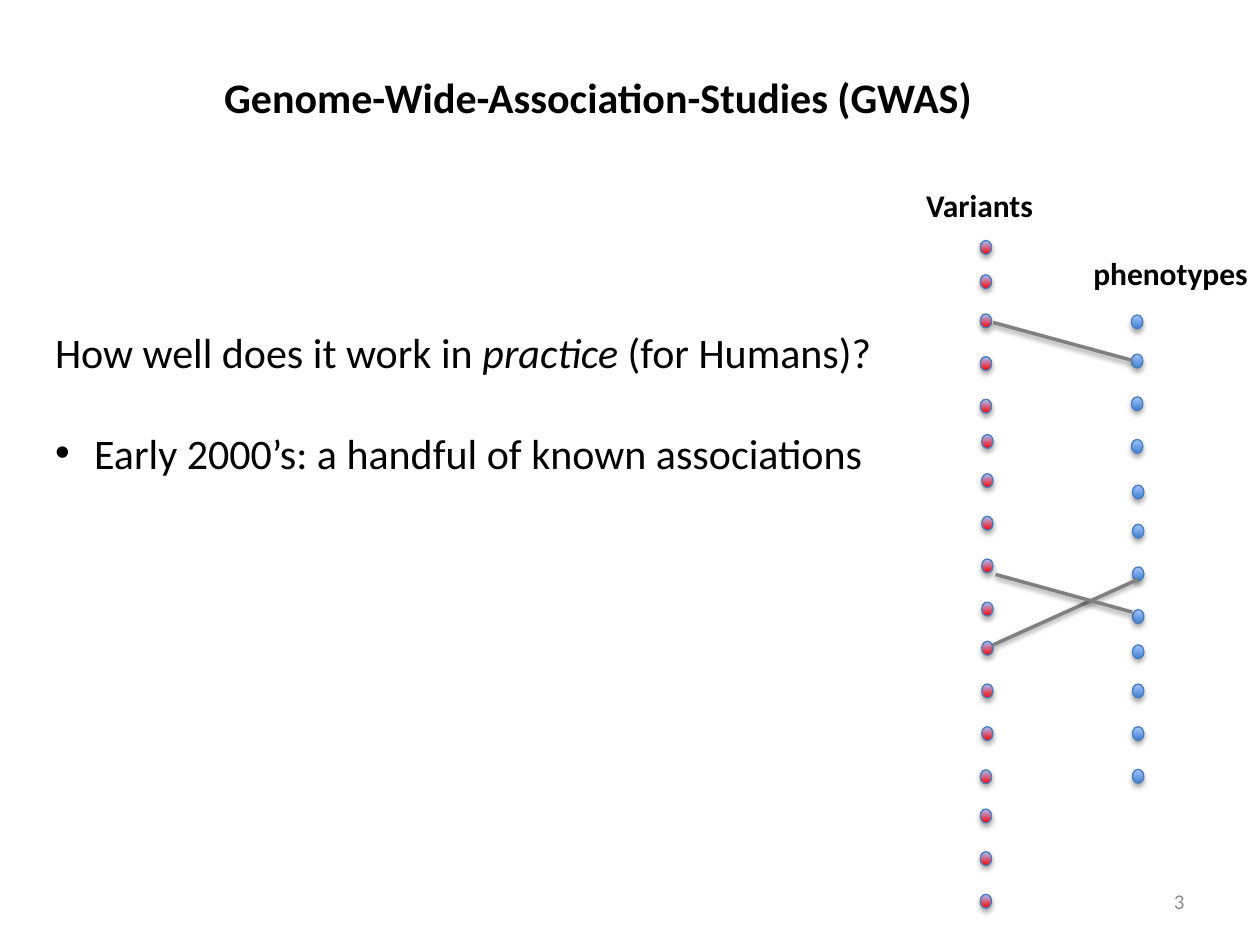
from pptx import Presentation
from pptx.dml.color import RGBColor as RGB
from pptx.enum.shapes import MSO_CONNECTOR as CONN, MSO_SHAPE as SHAPE
from pptx.enum.text import MSO_ANCHOR as ANCHOR, MSO_AUTO_SIZE as FIT, PP_ALIGN as ALIGN
from pptx.oxml import parse_xml
from pptx.oxml.ns import nsdecls
from pptx.util import Cm, Pt

# Content: a paragraph is a list of (text, italic) runs
TITLE = [[("Genome-Wide-Association-Studies (GWAS)", False)]]
BODY = [
    [("How well does it work in ", False), ("practice", True), (" (for Humans)?", False)],
    [("Early 2000’s: a handful of known associations", False)],
]
VARIANTS = [[("Variants", False)]]
PHENOTYPES = [[("phenotypes", False)]]
PAGE = [[("3", False)]]

# Dots come in runs of four, all lengths in cm: (left, top, number of dots)
DOT_W, DOT_H = 0.23, 0.28
DOT_STEPS = (0, 0.79, 1.65, 2.51)
VARIANT_DOTS = [(19.76, 4.85, 1), (19.76, 5.54, 4), (19.79, 8.76, 4),
                (19.79, 12.14, 4), (19.76, 15.52, 4)]
PHENOTYPE_DOTS = [(22.81, 6.35, 4), (22.83, 9.78, 4), (22.83, 13.0, 4)]
ASSOCIATIONS = [(20.02, 6.5, 22.81, 7.26), (20.02, 13.0, 22.94, 11.68),
                (20.07, 11.58, 22.83, 12.34)]

THEME = {
    "font": "Calibri",
    "text": "000000", "muted": "8C8C8C",
    "variant": "FF0000", "phenotype": "3F80CE", "highlight": "A4C4FF",
    "outline": "4B7EBC", "link": "808080",
    "large": 24, "label": 18, "small": 12,
}

prs = Presentation()
prs.slide_width, prs.slide_height = Cm(25.4), Cm(19.05)
s = prs.slides.add_slide(prs.slide_layouts[6])


def color(name):
    return RGB.from_string(THEME[name])


def add_text(paras, box, size="large", ink="text", bold=False, wrap=False,
             align=ALIGN.LEFT, anchor=ANCHOR.TOP, fit=FIT.SHAPE_TO_FIT_TEXT, gap=0):
    tf = s.shapes.add_textbox(*map(Cm, box)).text_frame
    tf.word_wrap, tf.auto_size, tf.vertical_anchor = wrap, fit, anchor
    for i, runs in enumerate(paras):
        p = tf.add_paragraph() if i else tf.paragraphs[0]
        p.alignment = align
        p.space_before = Pt(gap if i else 0)
        for text, italic in runs:
            r = p.add_run()
            r.text = text
            r.font.name, r.font.size = THEME["font"], Pt(THEME[size])
            r.font.bold, r.font.italic = bold, italic
            r.font.color.rgb = color(ink)
    return tf


def add_bullet(p, indent):
    pPr = p._p.get_or_add_pPr()
    pPr.set("marL", str(Cm(indent)))
    pPr.set("indent", str(-Cm(indent)))
    pPr.append(parse_xml(f'<a:buFont {nsdecls("a")} typeface="Arial"/>'))
    pPr.append(parse_xml(f'<a:buChar {nsdecls("a")} char="•"/>'))


def add_shadow(sp, dist, opacity):
    sp.element.spPr.append(parse_xml(
        f'<a:effectLst {nsdecls("a")}><a:outerShdw blurRad="{Pt(3.1)}" dist="{Pt(dist)}" '
        f'dir="5400000" rotWithShape="0"><a:srgbClr val="000000">'
        f'<a:alpha val="{opacity * 1000}"/></a:srgbClr></a:outerShdw></a:effectLst>'))


def add_dots(groups, base):
    for left, top, count in groups:
        for step in DOT_STEPS[:count]:
            sp = s.shapes.add_shape(SHAPE.OVAL, Cm(left), Cm(top + step), Cm(DOT_W), Cm(DOT_H))
            sp.fill.gradient()
            sp.fill.gradient_angle = 90
            for stop, name in zip(sp.fill.gradient_stops, (base, "highlight")):
                stop.color.rgb = color(name)
            sp.line.color.rgb, sp.line.width = color("outline"), Pt(0.75)
            add_shadow(sp, 1.8, 35)


# Title, body and page number
tf = add_text(BODY, (0.86, 6.45, 20.55, 4.37), wrap=True, gap=29)
add_bullet(tf.paragraphs[1], 0.79)
add_text(TITLE, (4.27, 1.32, 15.8, 1.27), bold=True)
add_text(PAGE, (18.21, 17.65, 5.92, 1.02), size="small", ink="muted", wrap=True,
         align=ALIGN.RIGHT, anchor=ANCHOR.MIDDLE, fit=FIT.NONE)

# Columns of dots with their headings
add_dots(PHENOTYPE_DOTS, "phenotype")
add_text(PHENOTYPES, (21.79, 5.0, 3.66, 1.02), size="label", bold=True)
add_dots(VARIANT_DOTS, "variant")
add_text(VARIANTS, (18.42, 3.63, 2.69, 1.02), size="label", bold=True)

# Known associations
for ends in ASSOCIATIONS:
    link = s.shapes.add_connector(CONN.STRAIGHT, *map(Cm, ends))
    link.line.color.rgb, link.line.width = color("link"), Pt(2)
    add_shadow(link, 1.6, 38)

prs.save("out.pptx")
